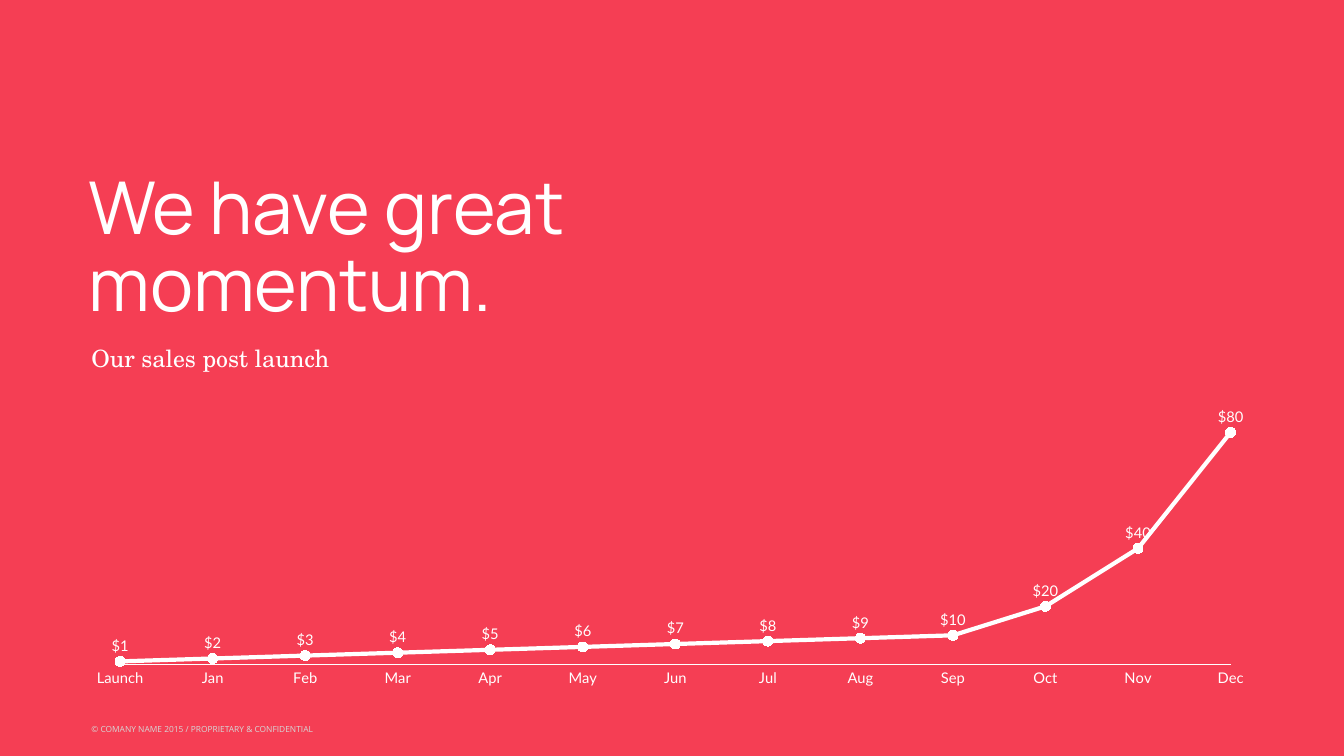
import pptx
import pptx.chart.data
import pptx.dml.color
import pptx.enum.chart
import pptx.enum.text
import pptx.util
from lxml import etree
from pptx.util import Cm, Pt

# Content
TITLE = "We have great momentum."
SUBTITLE = "Our sales post launch"
FOOTER = "© COMANY NAME 2015 / PROPRIETARY & CONFIDENTIAL"
SALES = {
    "Launch": 1, "Jan": 2, "Feb": 3, "Mar": 4, "Apr": 5, "May": 6, "Jun": 7,
    "Jul": 8, "Aug": 9, "Sep": 10, "Oct": 20, "Nov": 40, "Dec": 80,
}

# Look: places are left, top, width, height in cm
RED = pptx.dml.color.RGBColor(0xF5, 0x3E, 0x54)
WHITE = pptx.dml.color.RGBColor(0xFF, 0xFF, 0xFF)
GREY = pptx.dml.color.RGBColor(0xD6, 0xD6, 0xD6)
TITLE_PLACE = (4.47, 5.54, 28.91, 10.92)
SUBTITLE_PLACE = (4.45, 17.17, 56.52, 12.32)
FOOTER_PLACE = (4.04, 36.32, 12.32, 0.89)
CHART_PLACE = (4.72, 18.82, 57.96, 16.13)
PLOT_AREA = {"x": 0.023, "y": 0.081, "w": 0.966, "h": 0.828}
INSET = 0.15
AXIS_STEP = 80 / 7
AXIS_STEPS = 8


def set_font(font, name, size, color):
    font.name = name
    font.size = Pt(size)
    font.bold = False
    font.color.rgb = color


def place(shape, area):
    shape.left, shape.top, shape.width, shape.height = map(Cm, area)


def fill_text(box, text, name, size, color, inset, anchor, align, wrap=True):
    frame = box.text_frame
    frame.text = text
    frame.auto_size = pptx.enum.text.MSO_AUTO_SIZE.NONE
    frame.word_wrap = wrap
    frame.vertical_anchor = anchor
    frame.margin_left = frame.margin_right = Cm(inset)
    frame.margin_top = frame.margin_bottom = Cm(inset)
    para = frame.paragraphs[0]
    para.alignment = align
    para.space_before = Pt(0)
    properties = para._p.get_or_add_pPr()
    properties.set("marL", "0")
    properties.set("indent", "0")
    etree.SubElement(properties, pptx.oxml.ns.qn("a:buNone"))
    set_font(para.font, name, size, color)
    return para


def fix_plot_area(chart):
    """Pin the inner plot area to fixed fractions of the chart."""
    plot_area = chart._chartSpace.chart.plotArea
    qn = pptx.oxml.ns.qn
    layout = plot_area.find(qn("c:layout"))
    if layout is None:
        layout = etree.Element(qn("c:layout"))
        plot_area.insert(0, layout)
    manual = etree.SubElement(layout, qn("c:manualLayout"))
    settings = {"layoutTarget": "inner", "xMode": "edge", "yMode": "edge", **PLOT_AREA}
    for tag, value in settings.items():
        etree.SubElement(manual, qn("c:" + tag)).set("val", str(value))


def add_sales_chart(page):
    data = pptx.chart.data.CategoryChartData()
    data.categories = list(SALES)
    data.add_series("Series 1", list(SALES.values()))
    kinds = pptx.enum.chart
    chart = page.shapes.add_chart(
        kinds.XL_CHART_TYPE.LINE_MARKERS, *map(Cm, CHART_PLACE), data).chart
    chart.has_legend = chart.has_title = False
    set_font(chart.font, "Lato", 21, WHITE)
    fix_plot_area(chart)

    # Axes: only the category line and its labels show
    months, dollars = chart.category_axis, chart.value_axis
    for axis in (months, dollars):
        axis.has_major_gridlines = False
        axis.major_tick_mark = axis.minor_tick_mark = kinds.XL_TICK_MARK.NONE
    months.tick_label_position = kinds.XL_TICK_LABEL_POSITION.LOW
    months.format.line.color.rgb = WHITE
    months.format.line.width = Pt(1)
    set_font(months.tick_labels.font, "Lato", 21, WHITE)
    dollars.tick_label_position = kinds.XL_TICK_LABEL_POSITION.NONE
    dollars.format.line.fill.background()
    dollars.minimum_scale = 0
    dollars.maximum_scale = AXIS_STEP * AXIS_STEPS
    dollars.major_unit = AXIS_STEP
    # Points sit on the plot edges rather than between ticks
    between = dollars._element.find(pptx.oxml.ns.qn("c:crossBetween"))
    if between is None:
        between = etree.Element(pptx.oxml.ns.qn("c:crossBetween"))
        dollars._element.find(pptx.oxml.ns.qn("c:majorUnit")).addprevious(between)
    between.set("val", "midCat")

    # Line, markers and dollar labels
    chart.plots[0].vary_by_categories = False
    series = chart.plots[0].series[0]
    series.smooth = False
    series.format.line.color.rgb = WHITE
    series.format.line.width = Pt(6)
    series.marker.style = kinds.XL_MARKER_STYLE.CIRCLE
    series.marker.size = 14
    series.marker.format.fill.solid()
    series.marker.format.fill.fore_color.rgb = WHITE
    series.marker.format.line.color.rgb = WHITE
    labels = series.data_labels
    labels.show_value = True
    labels.position = kinds.XL_LABEL_POSITION.ABOVE
    labels.number_format = '"$"#,##0'
    labels.number_format_is_linked = False
    set_font(labels.font, "Lato", 21, WHITE)


def main():
    deck = pptx.Presentation()
    deck.slide_width, deck.slide_height = Cm(67.74), Cm(38.1)
    page = deck.slides.add_slide(deck.slide_layouts[1])
    page.background.fill.solid()
    page.background.fill.fore_color.rgb = RED
    anchors, aligns = pptx.enum.text.MSO_ANCHOR, pptx.enum.text.PP_ALIGN

    # Footer
    footer = page.shapes.add_textbox(*map(Cm, FOOTER_PLACE))
    fill_text(footer, FOOTER, "Open Sans", 12, GREY, INSET,
              anchors.TOP, aligns.CENTER, wrap=False)

    # Title and subtitle
    title, subtitle = page.shapes.title, page.placeholders[1]
    place(title, TITLE_PLACE)
    para = fill_text(title, TITLE, "Manrope", 104, WHITE, 0, anchors.BOTTOM, aligns.LEFT)
    para.line_spacing = 0.88
    place(subtitle, SUBTITLE_PLACE)
    fill_text(subtitle, SUBTITLE, "TeX Gyre Schola", 34, WHITE, INSET,
              anchors.TOP, aligns.LEFT)

    add_sales_chart(page)
    deck.save("out.pptx")


if __name__ == "__main__":
    main()
